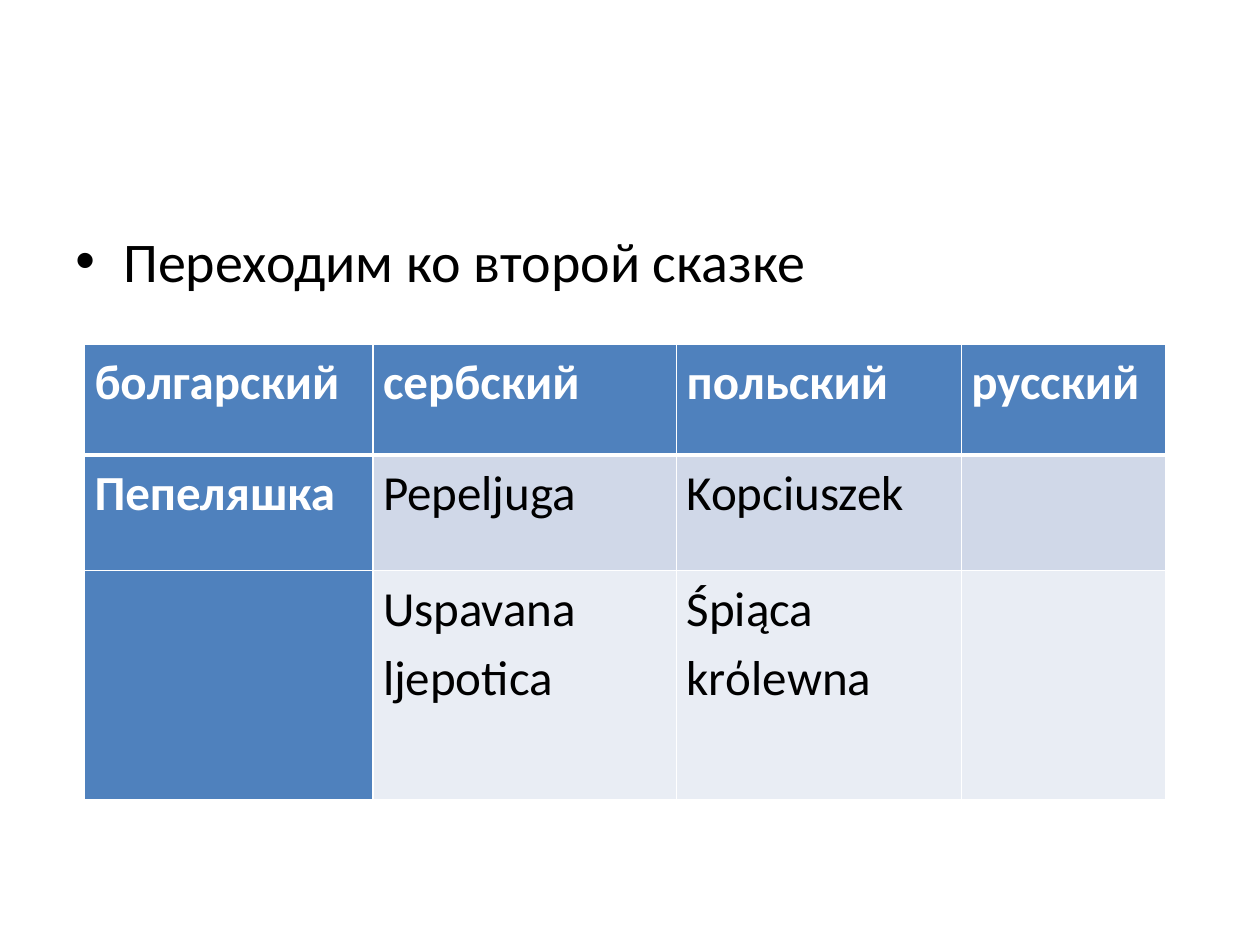
from lxml import etree
from pptx import Presentation
from pptx import util as u
from pptx.dml.color import RGBColor
from pptx.enum import text
from pptx.oxml.ns import qn

FONT = "Calibri"
BLUE, WHITE, BLACK = "4F81BD", "FFFFFF", "000000"
BANDS = ["D0D8E8", "E9EDF4"]
WIDTHS = [2.29, 2.41, 2.26, 1.62]
HEIGHTS = [0.88, 0.92, 1.82]
ROWS = [
    ["болгарский", "сербский", "польский", "русский"],
    ["Пепеляшка", "Pepeljuga", "Kopciuszek", ""],
    ["", "Uspavana ljepotica", "Śpiąca krόlewna", ""],
]


def color(code):
    return RGBColor.from_string(code)


def style(para, size, code, bold=False):
    font = para.font
    font.name, font.size, font.bold = FONT, u.Pt(size), bold
    font.color.rgb = color(code)


def border(cell, widths):
    props = cell._tc.get_or_add_tcPr()
    for i, (side, width) in enumerate(widths.items()):
        line = etree.Element(qn(f"a:ln{side}"), w=str(u.Pt(width)))
        fill = etree.SubElement(line, qn("a:solidFill"))
        etree.SubElement(fill, qn("a:srgbClr"), val=WHITE)
        props.insert(i, line)


def add_bullet(slide, left, top, width, height, words):
    box = slide.shapes.add_textbox(*map(u.Inches, (left, top, width, height)))
    frame = box.text_frame
    frame.word_wrap = True
    frame.vertical_anchor = text.MSO_ANCHOR.TOP
    para = frame.paragraphs[0]
    para.text = words
    props = para._p.get_or_add_pPr()
    indent = u.Inches(0.38)
    props.set("marL", str(indent))
    props.set("indent", str(-indent))
    etree.SubElement(props, qn("a:buFont"), typeface="Arial")
    etree.SubElement(props, qn("a:buChar"), char="•")
    style(para, 32, BLACK)


def fill_cell(cell, words, row, col):
    head = row == 0 or col == 0
    cell.fill.solid()
    cell.fill.fore_color.rgb = color(BLUE if head else BANDS[row - 1])
    border(cell, {"L": 1, "R": 1, "T": 3 if row == 1 else 1, "B": 3 if row == 0 else 1})
    cell.margin_left = cell.margin_right = u.Inches(0.08)
    cell.margin_top = cell.margin_bottom = 0
    para = cell.text_frame.paragraphs[0]
    para.text = words
    para.line_spacing = 1.15
    para.space_after = u.Pt(7.5)
    style(para, 28, WHITE if head else BLACK, head)


def add_grid(slide, left, top):
    box = map(u.Inches, (left, top, sum(WIDTHS), sum(HEIGHTS)))
    grid = slide.shapes.add_table(len(ROWS), len(WIDTHS), *box).table
    grid.first_col = True
    for col, width in zip(grid.columns, WIDTHS):
        col.width = u.Inches(width)
    for r, row in enumerate(ROWS):
        grid.rows[r].height = u.Inches(HEIGHTS[r])
        for c, words in enumerate(row):
            fill_cell(grid.cell(r, c), words, r, c)


def main():
    deck = Presentation()
    deck.slide_width, deck.slide_height = u.Inches(10), u.Inches(7.5)
    slide = deck.slides.add_slide(deck.slide_layouts[6])
    add_bullet(slide, 0.5, 1.75, 9, 4.95, "Переходим ко второй сказке")
    add_grid(slide, 0.67, 2.73)
    deck.save("out.pptx")


if __name__ == "__main__":
    main()
